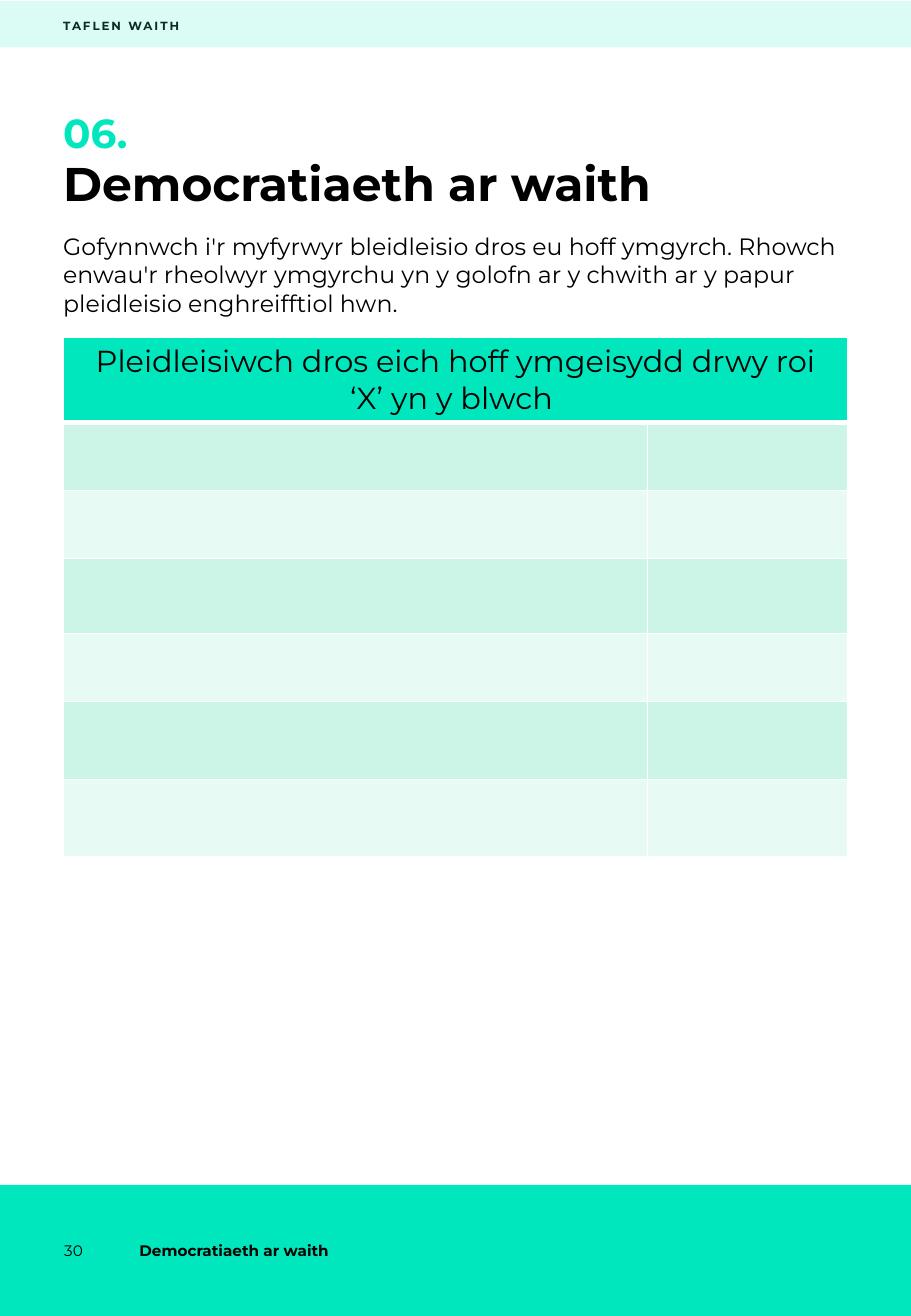
from dataclasses import dataclass

from lxml.etree import SubElement
from pptx import Presentation
from pptx.dml.color import RGBColor
from pptx.enum.shapes import MSO_SHAPE as Preset
from pptx.enum.text import MSO_ANCHOR as Anchor, MSO_AUTO_SIZE as AutoSize, PP_ALIGN as Align
from pptx.oxml.ns import qn
from pptx.util import Emu, Pt

EMU_PER_PX = 9144  # 100 px to the inch
FONT = "Montserrat"
GREEN = RGBColor(0x00, 0xE7, 0xBD)
HEADER_GREEN = RGBColor(0x00, 0xE6, 0xBD)
ROW_DARK = RGBColor(0xCC, 0xF5, 0xE8)
ROW_LIGHT = RGBColor(0xE7, 0xFA, 0xF4)
BLACK = RGBColor(0x00, 0x00, 0x00)
INK = RGBColor(0x0D, 0x0D, 0x0D)
WHITE = RGBColor(0xFF, 0xFF, 0xFF)

SLIDE_WIDTH, SLIDE_HEIGHT = 750, 1084
MARGIN, CONTENT_WIDTH = 52, 646
FOOTER_TOP, FOOTER_HEIGHT = 976, 108
COLUMN_WIDTHS = (481, 165)
ROW_HEIGHTS = (41, 56, 56, 62, 56, 64, 64)


@dataclass(frozen=True)
class Box:
    left: int
    top: int
    width: int
    height: int

    def emu(self) -> tuple[Emu, ...]:
        return tuple(px(n) for n in (self.left, self.top, self.width, self.height))


@dataclass(frozen=True)
class Heading:
    placeholder: int
    box: Box
    text: str
    size: float
    color: RGBColor = BLACK
    bold: bool = False
    anchor: Anchor = Anchor.TOP
    line_spacing: float = 1.0
    tracking: int = 0


@dataclass(frozen=True)
class FooterLabel:
    box: Box
    text: str
    bold: bool


HEADINGS = (
    Heading(0, Box(MARGIN, 132, CONTENT_WIDTH, 88), "Democratiaeth ar waith", 28,
            bold=True, line_spacing=0.9),
    Heading(1, Box(MARGIN, 89, CONTENT_WIDTH, 37), "06.", 24, GREEN, bold=True),
    Heading(2, Box(MARGIN, 191, CONTENT_WIDTH, 70),
            "Gofynnwch i'r myfyrwyr bleidleisio dros eu hoff ymgyrch. Rhowch enwau'r "
            "rheolwyr ymgyrchu yn y golofn ar y chwith ar y papur pleidleisio "
            "enghreifftiol hwn.", 14),
    Heading(3, Box(MARGIN, 7, 270, 28), "TAFLEN WAITH", 7, INK, bold=True,
            anchor=Anchor.MIDDLE, tracking=120),
)
FOOTER_LABELS = (
    FooterLabel(Box(43, FOOTER_TOP, 62, FOOTER_HEIGHT), "30", False),
    FooterLabel(Box(105, FOOTER_TOP, 277, FOOTER_HEIGHT), "Democratiaeth ar waith", True),
)


def px(length: int) -> Emu:
    return Emu(length * EMU_PER_PX)


def write_text(frame, text: str, *, size: float, color: RGBColor = BLACK, bold: bool = False,
               align: Align = Align.LEFT, line_spacing: float = 1.0, tracking: int = 0,
               plain_list: bool = False) -> None:
    paragraph = frame.paragraphs[0]
    if plain_list:
        properties = paragraph._p.get_or_add_pPr()
        properties.set("marL", "0")
        properties.set("indent", "0")
        SubElement(properties, qn("a:buNone"))
    paragraph.alignment = align
    paragraph.line_spacing = line_spacing
    paragraph.space_before = Pt(0)
    run = paragraph.add_run()
    run.text = text
    font = run.font
    font.name, font.size, font.bold = FONT, Pt(size), bold
    font.color.rgb = color
    if tracking:
        run._r.get_or_add_rPr().set("spc", str(tracking))


def add_band(slide, box: Box, opacity: int = 100) -> None:
    shape = slide.shapes.add_shape(Preset.RECTANGLE, *box.emu())
    shape.shadow.inherit = False
    shape.fill.solid()
    shape.fill.fore_color.rgb = GREEN
    shape.line.fill.background()
    if opacity < 100:
        color = shape.element.spPr.find(f"{qn('a:solidFill')}/{qn('a:srgbClr')}")
        SubElement(color, qn("a:alpha"), val=str(opacity * 1000))


def fill_heading(slide, heading: Heading) -> None:
    shape = slide.placeholders[heading.placeholder]
    shape.left, shape.top, shape.width, shape.height = heading.box.emu()
    frame = shape.text_frame
    frame.margin_left = frame.margin_right = frame.margin_top = frame.margin_bottom = 0
    frame.word_wrap = True
    frame.auto_size = AutoSize.NONE
    frame.vertical_anchor = heading.anchor
    write_text(frame, heading.text, size=heading.size, color=heading.color,
               bold=heading.bold, line_spacing=heading.line_spacing,
               tracking=heading.tracking, plain_list=heading.placeholder > 0)


def add_footer_label(slide, label: FooterLabel) -> None:
    frame = slide.shapes.add_textbox(*label.box.emu()).text_frame
    frame.word_wrap = True
    frame.vertical_anchor = Anchor.MIDDLE
    write_text(frame, label.text, size=9, bold=label.bold)


def style_cell(cell, color: RGBColor, top: int, bottom: int) -> None:
    properties = cell._tc.get_or_add_tcPr()
    for side, points in (("L", 1), ("R", 1), ("T", top), ("B", bottom)):
        line = SubElement(properties, qn(f"a:ln{side}"), w=str(Pt(points)))
        SubElement(SubElement(line, qn("a:solidFill")), qn("a:srgbClr"), val=str(WHITE))
    cell.fill.solid()
    cell.fill.fore_color.rgb = color


def add_ballot(slide) -> None:
    box = Box(MARGIN, 278, CONTENT_WIDTH, sum(ROW_HEIGHTS))
    table = slide.shapes.add_table(len(ROW_HEIGHTS), len(COLUMN_WIDTHS), *box.emu()).table
    table.first_row = table.horz_banding = False
    for column, width in zip(table.columns, COLUMN_WIDTHS):
        column.width = px(width)
    for index, (row, height) in enumerate(zip(table.rows, ROW_HEIGHTS)):
        row.height = px(height)
        color = HEADER_GREEN if index == 0 else ROW_DARK if index % 2 else ROW_LIGHT
        for cell in row.cells:
            style_cell(cell, color, top=3 if index == 1 else 1, bottom=3 if index == 0 else 1)
    header = table.cell(0, 0)
    header.merge(table.cell(0, 1))
    write_text(header.text_frame,
               "Pleidleisiwch dros eich hoff ymgeisydd drwy roi ‘X’ yn y blwch ",
               size=18, align=Align.CENTER)


def main() -> None:
    presentation = Presentation()
    presentation.slide_width, presentation.slide_height = px(SLIDE_WIDTH), px(SLIDE_HEIGHT)
    slide = presentation.slides.add_slide(presentation.slide_layouts.get_by_name("Comparison"))

    # Title, number, introduction and page label
    for heading in HEADINGS:
        fill_heading(slide, heading)
    unused = slide.placeholders[4].element
    unused.getparent().remove(unused)

    # Header and footer
    add_band(slide, Box(0, FOOTER_TOP, SLIDE_WIDTH, FOOTER_HEIGHT))
    add_band(slide, Box(0, 1, SLIDE_WIDTH, 38), opacity=14)
    for label in FOOTER_LABELS:
        add_footer_label(slide, label)

    # Ballot paper
    add_ballot(slide)
    presentation.save("out.pptx")


if __name__ == "__main__":
    main()
